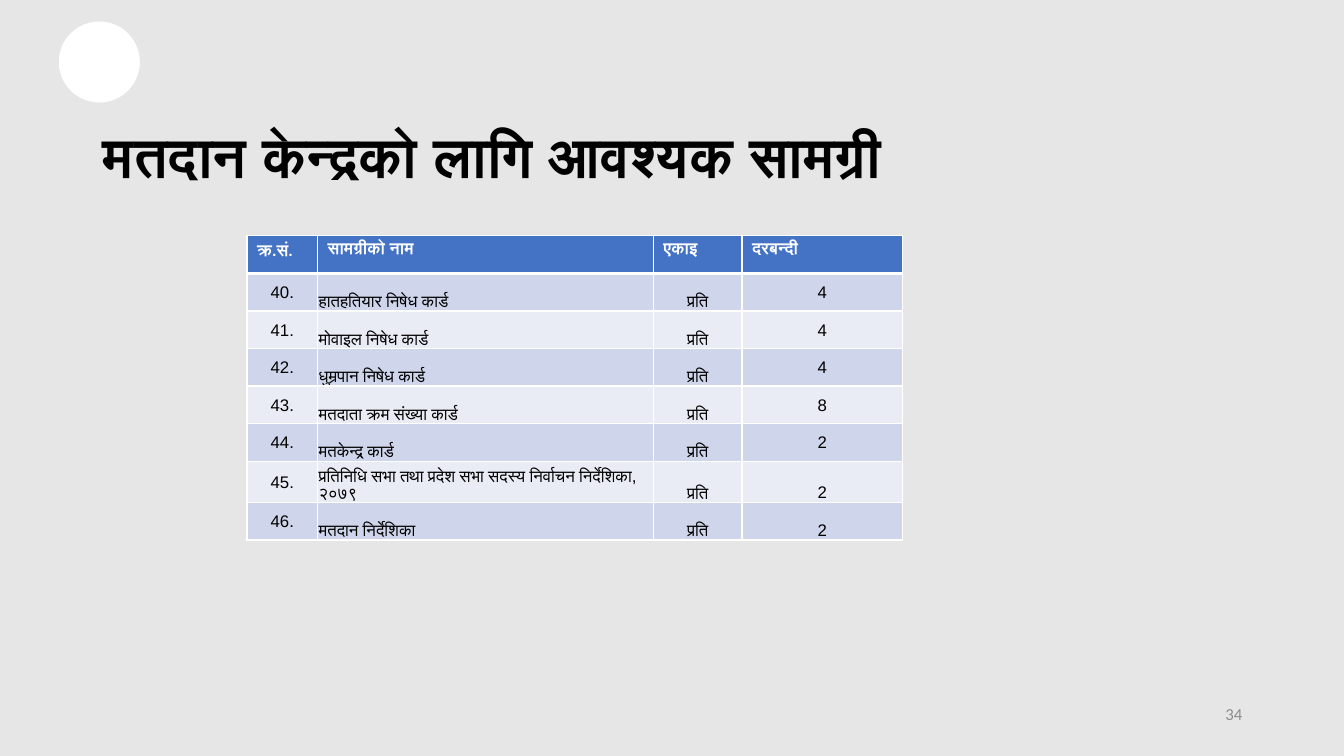
from lxml.etree import SubElement
from pptx import Presentation
from pptx.dml.color import RGBColor
from pptx.enum.shapes import MSO_SHAPE as Shape
from pptx.enum.text import MSO_ANCHOR as Anchor, PP_ALIGN as Align
from pptx.oxml.ns import qn
from pptx.util import Inches, Pt

HEADINGS = ["क्र.सं.", "सामग्रीको नाम", "एकाइ", "दरबन्दी"]
MATERIALS = [
    ("हातहतियार निषेध कार्ड", "4"),
    ("मोवाइल निषेध कार्ड", "4"),
    ("धुम्रपान निषेध कार्ड", "4"),
    ("मतदाता क्रम संख्या कार्ड", "8"),
    ("मतकेन्द्र कार्ड", "2"),
    ("प्रतिनिधि सभा तथा प्रदेश सभा सदस्य निर्वाचन निर्देशिका, २०७९", "2"),
    ("मतदान निर्देशिका", "2"),
]
FIRST_SERIAL = 40
FIRST_LOW_QUANTITY = 45
COLUMN_WIDTHS = [0.7, 3.33, 0.88, 1.59]
BANDS = ["CFD5EA", "E9EBF5"]


def paint(fill, color):
    fill.solid()
    fill.fore_color.rgb = RGBColor.from_string(color)


def write(frame, text, size, font, color, bold=False, align=Align.LEFT):
    paragraph = frame.paragraphs[0]
    paragraph.alignment = align
    run = paragraph.add_run()
    run.text = text
    run.font.size = Pt(size)
    run.font.name = font
    run.font.bold = bold
    run.font.color.rgb = RGBColor.from_string(color)
    return paragraph


def add_circle(slide):
    circle = slide.shapes.add_shape(
        Shape.OVAL, Inches(0.59), Inches(0.22), Inches(0.79), Inches(0.79))
    circle.shadow.inherit = False
    paint(circle.fill, "FFFFFF")
    paint(circle.line.fill, "FFFFFF")
    circle.line.width = Pt(1)


def add_title(slide, text):
    title = slide.shapes.title
    title.left, title.top = Inches(0.92), Inches(1.13)
    title.width, title.height = Inches(11.5), Inches(0.9)
    title.text_frame.vertical_anchor = Anchor.MIDDLE
    heading = write(title.text_frame, text, 40, "Lato", "000000", bold=True)
    heading.line_spacing = 0.9


def add_page_number(slide, number):
    page = slide.shapes.add_textbox(
        Inches(9.42), Inches(6.88), Inches(3), Inches(0.4)).text_frame
    page.word_wrap = True
    page.vertical_anchor = Anchor.MIDDLE
    write(page, number, 12, "Calibri", "8C8C8C", align=Align.RIGHT)


def set_borders(cell, widths):
    properties = cell._tc.get_or_add_tcPr()
    for edge, width in widths.items():
        border = SubElement(properties, qn(f"a:ln{edge}"), w=str(Pt(width)))
        border_fill = SubElement(border, qn("a:solidFill"))
        SubElement(border_fill, qn("a:srgbClr"), val="FFFFFF")


def fill_heading(cell, text):
    set_borders(cell, {"L": 1, "R": 1, "T": 1, "B": 3})
    paint(cell.fill, "4472C4")
    write(cell.text_frame, text, 12, "Calibri", "FFFFFF", bold=True)


def fill_entry(cell, text, band, anchor, align):
    set_borders(cell, {"L": 1, "R": 1, "B": 1})
    paint(cell.fill, band)
    cell.margin_left = cell.margin_right = cell.margin_top = Inches(0.01)
    cell.margin_bottom = 0
    cell.vertical_anchor = anchor
    write(cell.text_frame, text, 12, "Arial", "000000", align=align)


def add_materials_table(slide):
    row_count = len(MATERIALS) + 1
    table = slide.shapes.add_table(
        row_count, len(HEADINGS), Inches(2.45), Inches(2.34),
        Inches(sum(COLUMN_WIDTHS)), Inches(2.98)).table
    for column, width in zip(table.columns, COLUMN_WIDTHS):
        column.width = Inches(width)
    for column, heading in enumerate(HEADINGS):
        fill_heading(table.cell(0, column), heading)
    for row, (material, quantity) in enumerate(MATERIALS, start=1):
        serial = FIRST_SERIAL + row - 1
        band = BANDS[(row - 1) % 2]
        low = serial >= FIRST_LOW_QUANTITY
        entries = [
            (f"{serial}.", Anchor.MIDDLE, Align.CENTER),
            (material, Anchor.BOTTOM, Align.LEFT),
            ("प्रति", Anchor.BOTTOM, Align.CENTER),
            (quantity, Anchor.BOTTOM if low else Anchor.MIDDLE, Align.CENTER),
        ]
        for column, (text, anchor, align) in enumerate(entries):
            fill_entry(table.cell(row, column), text, band, anchor, align)


def main():
    deck = Presentation()
    deck.slide_width, deck.slide_height = Inches(13.33), Inches(7.5)
    slide = deck.slides.add_slide(deck.slide_layouts[5])
    paint(slide.background.fill, "E7E6E6")
    add_circle(slide)
    add_title(slide, "मतदान केन्द्रको लागि आवश्यक सामग्री")
    add_page_number(slide, "34")
    add_materials_table(slide)
    deck.save("out.pptx")


if __name__ == "__main__":
    main()
